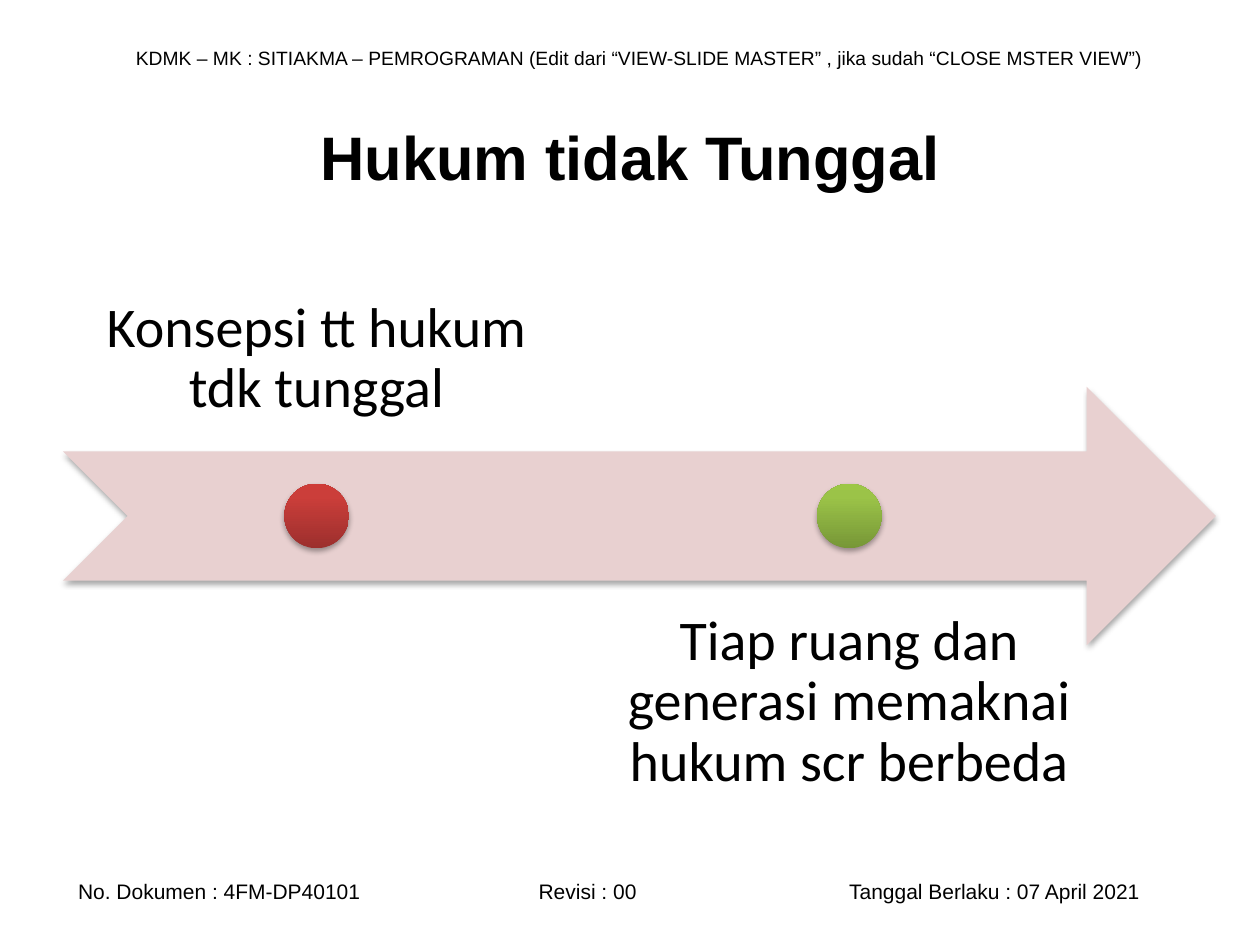
from collections import namedtuple
from copy import deepcopy
from dataclasses import dataclass

from lxml.etree import SubElement
from pptx import Presentation
from pptx.dml.color import RGBColor
from pptx.enum.shapes import MSO_SHAPE as Shape
from pptx.enum.text import MSO_ANCHOR as Anchor, PP_ALIGN as Align
from pptx.oxml.ns import qn
from pptx.util import Inches, Pt

Box = namedtuple("Box", "left top width height")


@dataclass(frozen=True)
class Theme:
    heading_font: str = "Arial"
    label_font: str = "Calibri"
    ink: str = "000000"
    arrow: str = "E8D0D0"
    red: tuple = ("9C2F2D", "CB3E3A", "CE3B37")
    green: tuple = ("779737", "9BC348", "9DC746")
    header_size: float = 11
    footer_size: float = 12
    title_size: float = 35.1
    label_size: float = 32


THEME = Theme()


def inside(box, left, top, width, height):
    """Return the part of a box given by shares of its size."""
    return Box(box.left + left * box.width, box.top + top * box.height,
               width * box.width, height * box.height)


def add_text(page, box, text, size, font=THEME.heading_font, bold=False,
             align=Align.LEFT, anchor=Anchor.MIDDLE, insets=(0.1, 0.05, 0.1, 0.05),
             line_spacing=None, tabs=()):
    frame = page.shapes.add_textbox(*map(Inches, box)).text_frame
    frame.word_wrap = True
    frame.vertical_anchor = anchor
    (frame.margin_left, frame.margin_top,
     frame.margin_right, frame.margin_bottom) = map(Inches, insets)
    para = frame.paragraphs[0]
    para.alignment = align
    para.line_spacing = line_spacing
    if tabs:
        tab_list = SubElement(para._p.get_or_add_pPr(), qn("a:tabLst"))
        for position in tabs:
            SubElement(tab_list, qn("a:tab"), pos=str(Inches(position)), algn="l")
    span = para.add_run()
    span.text = text
    span.font.name = font
    span.font.size = Pt(size)
    span.font.bold = bold
    span.font.color.rgb = RGBColor.from_string(THEME.ink)


def add_shadow(shape):
    """Add a soft shadow that falls straight down."""
    shape.shadow.inherit = False
    effects = shape._element.spPr.find(qn("a:effectLst"))
    shadow = SubElement(effects, qn("a:outerShdw"), blurRad="40000", dist="23000",
                        dir="5400000", rotWithShape="0")
    color = SubElement(shadow, qn("a:srgbClr"), val="000000")
    SubElement(color, qn("a:alpha"), val="35000")


def add_solid(page, kind, box, color):
    shape = page.shapes.add_shape(kind, *map(Inches, box))
    shape.fill.solid()
    shape.fill.fore_color.rgb = RGBColor.from_string(color)
    shape.line.fill.background()
    add_shadow(shape)
    return shape


def add_dot(page, box, colors):
    """Add a circle shaded from the first colour at its foot to the last on top."""
    dot = add_solid(page, Shape.OVAL, box, colors[0])
    dot.fill.gradient()
    stop_list = dot._element.spPr.find(".//" + qn("a:gsLst"))
    stop_list.append(deepcopy(stop_list[0]))
    for stop, color, position in zip(dot.fill.gradient_stops, colors, (0, 0.8, 1)):
        stop.color.rgb = RGBColor.from_string(color)
        stop.position = position
    dot.fill.gradient_angle = 90


def add_header(page, box):
    add_text(page, box, "KDMK – MK : SITIAKMA – PEMROGRAMAN (Edit dari “VIEW-SLIDE "
             "MASTER” , jika sudah “CLOSE MSTER VIEW”)", THEME.header_size)


def add_footer(page, box):
    fields = ("No. Dokumen : 4FM-DP40101", "Revisi : 00",
              "Tanggal Berlaku : 07 April 2021")
    add_text(page, box, "\t".join(fields), THEME.footer_size,
             insets=(0, 0.05, 0, 0.05),
             tabs=(0.43 * box.width, 0.72 * box.width))


def add_title(page, box):
    add_text(page, box, "Hukum tidak Tunggal", THEME.title_size, bold=True,
             align=Align.CENTER)


def add_timeline(page, box):
    """Place a notched arrow with labelled dots, alternately above and below."""
    add_solid(page, Shape.NOTCHED_RIGHT_ARROW, inside(box, 0, 0.3, 1, 0.4),
              THEME.arrow)
    label_width, label_height = 0.44, 0.4
    events = (
        ("Konsepsi tt hukum tdk tunggal", THEME.red, 0, Anchor.BOTTOM),
        ("Tiap ruang dan generasi memaknai hukum scr berbeda", THEME.green,
         1 - label_height, Anchor.TOP),
    )
    diameter = 0.1 * box.height
    for index, (text, colors, top, anchor) in enumerate(events):
        label = inside(box, index * label_width * 1.05, top,
                       label_width, label_height)
        add_text(page, label, text, THEME.label_size, font=THEME.label_font,
                 align=Align.CENTER, anchor=anchor, insets=(0.25,) * 4,
                 line_spacing=0.9)
        add_dot(page, Box(label.left + (label.width - diameter) / 2,
                          box.top + (box.height - diameter) / 2,
                          diameter, diameter), colors)


def main():
    deck = Presentation()
    deck.slide_width, deck.slide_height = Inches(10), Inches(7.5)
    page = deck.slides.add_slide(deck.slide_layouts[6])
    add_header(page, Box(0.98, 0.31, 8.35, 0.29))
    add_footer(page, Box(0.62, 6.92, 8.5, 0.3))
    add_title(page, Box(0.5, 0.61, 9, 1.25))
    add_timeline(page, Box(0.5, 1.53, 9.15, 5.13))
    deck.save("out.pptx")


if __name__ == "__main__":
    main()
